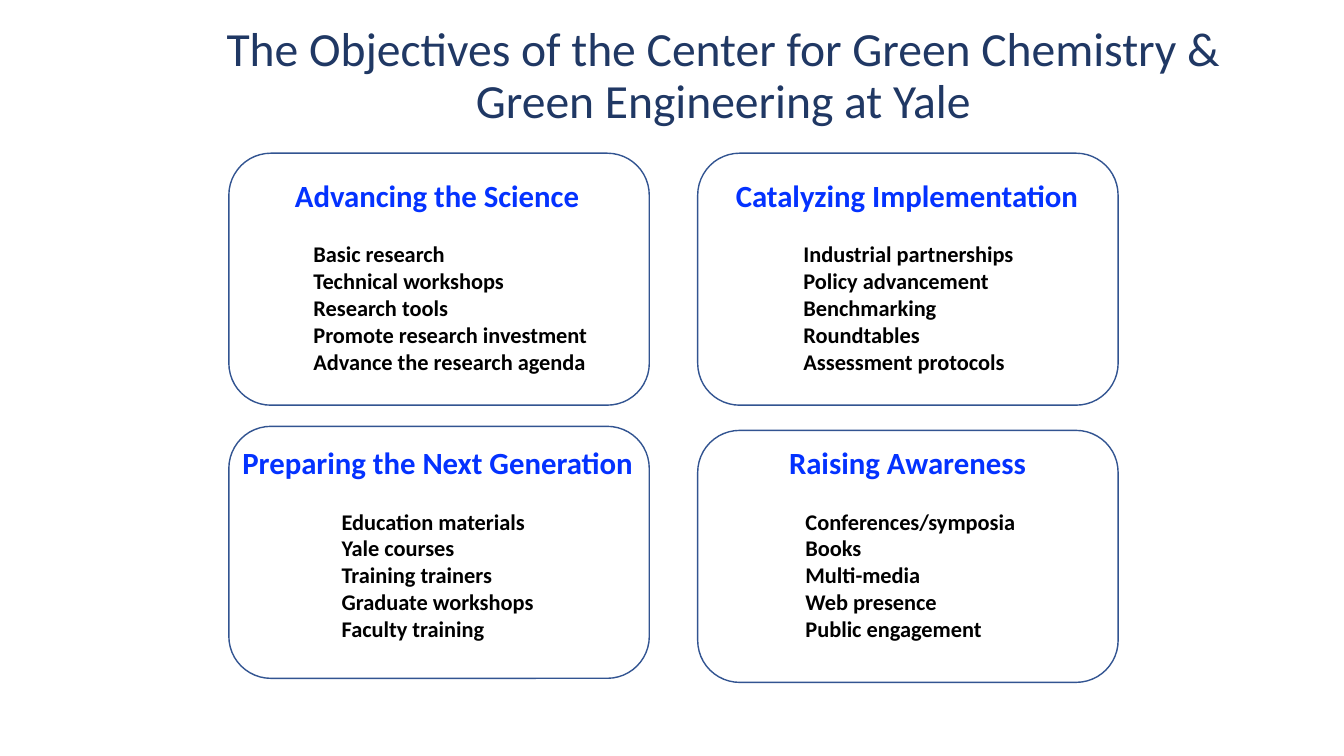
from pptx import Presentation
from pptx import util as u
from pptx.dml.color import RGBColor
from pptx.enum import shapes, text

NAVY = RGBColor(0x20, 0x38, 0x64)
BLUE = RGBColor(0x04, 0x32, 0xFF)
OUTLINE = RGBColor(0x32, 0x54, 0x91)
BLACK = RGBColor(0, 0, 0)
WHITE = RGBColor(255, 255, 255)

PANEL_WIDTH, PANEL_HEIGHT = 4.17, 2.5
OBJECTIVES = [
    ((2.27, 1.52), (2.71, 1.7, 3.25), 0.3, "Advancing the Science",
     ["Basic research", "Technical workshops", "Research tools",
      "Promote research investment", "Advance the research agenda"]),
    ((6.92, 1.52), (7.17, 1.7, 3.65), 0.7, "Catalyzing Implementation",
     ["Industrial partnerships", "Policy advancement", "Benchmarking",
      "Roundtables", "Assessment protocols"]),
    ((2.27, 4.23), (2.29, 4.35, 4.1), 1, "Preparing the Next Generation",
     ["Education materials", "Yale courses", "Training trainers",
      "Graduate workshops", "Faculty training"]),
    ((6.92, 4.27), (7.59, 4.35, 2.82), 0.3, "Raising Awareness",
     ["Conferences/symposia", "Books", "Multi-media", "Web presence",
      "Public engagement"]),
]


class ObjectivesSlide:
    """Draws the title, panels and lists in one shared style."""

    font_name = "Calibri"

    def __init__(self, slide):
        self.slide = slide

    def style(self, paragraph, size, color, bold=True):
        font = paragraph.font
        font.name, font.size, font.bold = self.font_name, u.Pt(size), bold
        font.color.rgb = color

    def frame(self, left, top, width, height):
        box = self.slide.shapes.add_textbox(*map(u.Inches, (left, top, width, height)))
        box.text_frame.word_wrap = True
        return box.text_frame

    def title(self, wording):
        frame = self.frame(1.87, 0.14, 10.61, 1.25)
        frame.vertical_anchor = text.MSO_ANCHOR.MIDDLE
        heading = frame.paragraphs[0]
        heading.text = wording
        heading.alignment = text.PP_ALIGN.CENTER
        heading.line_spacing = 0.9
        self.style(heading, 34, NAVY, bold=False)

    def panel(self, left, top):
        panel = self.slide.shapes.add_shape(
            shapes.MSO_SHAPE.ROUNDED_RECTANGLE,
            *map(u.Inches, (left, top, PANEL_WIDTH, PANEL_HEIGHT)))
        panel.shadow.inherit = False
        panel.fill.solid()
        panel.fill.fore_color.rgb = WHITE
        panel.line.color.rgb = OUTLINE
        panel.line.width = u.Pt(1)

    def objective(self, left, top, width, indent, name, activities):
        frame = self.frame(left, top, width, 2.09)
        frame.auto_size = text.MSO_AUTO_SIZE.SHAPE_TO_FIT_TEXT
        heading = frame.paragraphs[0]
        heading.text = name
        heading.alignment = text.PP_ALIGN.CENTER
        self.style(heading, 22, BLUE)
        for position, activity in enumerate(activities):
            item = frame.add_paragraph()
            item.text = activity
            item.level = 1
            properties = item._p.get_or_add_pPr()
            properties.set("marL", str(u.Inches(indent)))
            properties.set("indent", "0")
            if position == 0:
                item.space_before = u.Pt(19.5)
            self.style(item, 16, BLACK)


def main():
    deck = Presentation()
    deck.slide_width, deck.slide_height = u.Inches(13.33), u.Inches(7.5)
    page = ObjectivesSlide(deck.slides.add_slide(deck.slide_layouts[6]))
    page.title("The Objectives of the Center for Green Chemistry & "
               "Green Engineering at Yale")
    for corner, place, indent, name, activities in OBJECTIVES:
        page.panel(*corner)
        page.objective(*place, indent, name, activities)
    deck.save("out.pptx")


if __name__ == "__main__":
    main()
